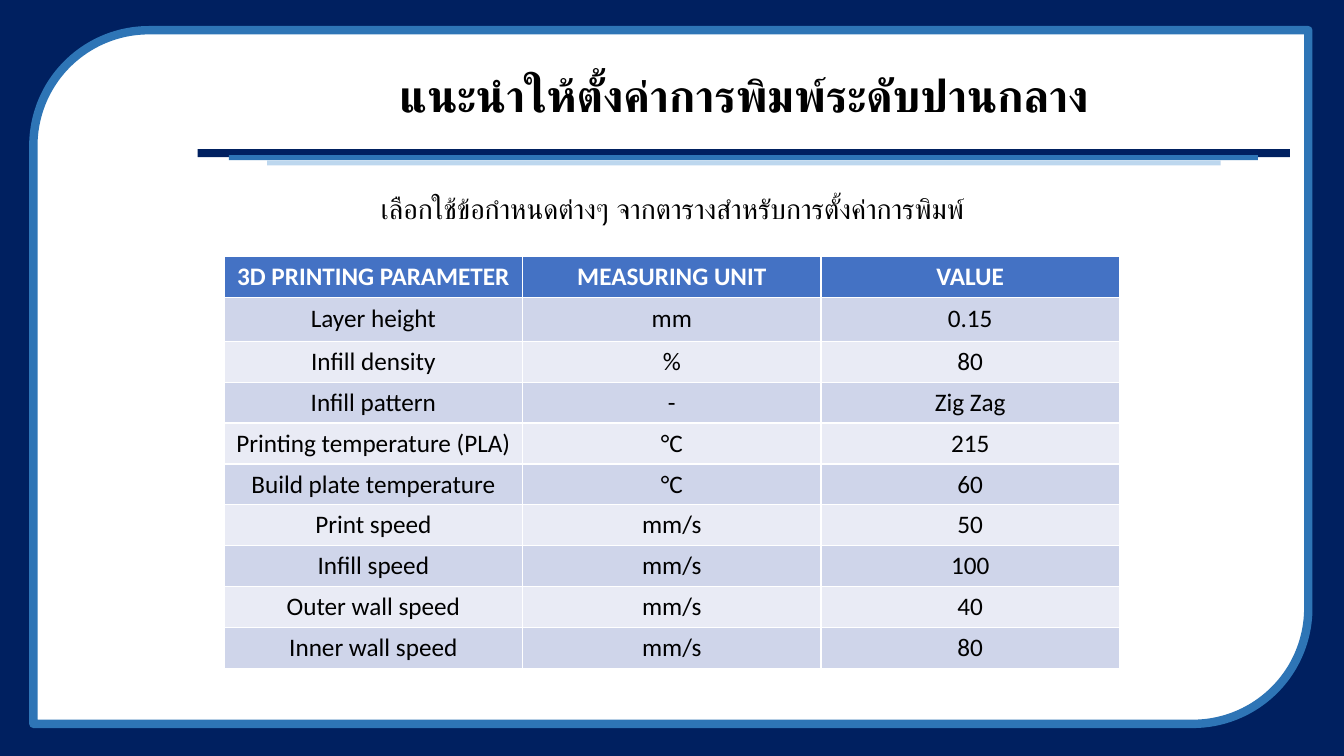
from lxml import etree
from pptx import Presentation
from pptx import util as u
from pptx.dml.color import RGBColor
from pptx.enum import shapes, text
from pptx.oxml import ns

NAVY = RGBColor(0x00, 0x20, 0x60)
BLUE = RGBColor(0x2E, 0x75, 0xB6)
PALE_BLUE = RGBColor(0xBD, 0xD7, 0xEE)
HEADER_BLUE = RGBColor(0x44, 0x72, 0xC4)
BAND_DARK = RGBColor(0xCF, 0xD5, 0xEA)
BAND_LIGHT = RGBColor(0xE9, 0xEB, 0xF5)
WHITE = RGBColor(0xFF, 0xFF, 0xFF)
BLACK = RGBColor(0x00, 0x00, 0x00)

presentation = Presentation()
presentation.slide_width = u.Cm(33.87)
presentation.slide_height = u.Cm(19.05)
slide = presentation.slides.add_slide(presentation.slide_layouts[6])


def add_panel(kind, box, color):
    shape = slide.shapes.add_shape(kind, *map(u.Cm, box))
    shape.shadow.inherit = False
    shape.fill.solid()
    shape.fill.fore_color.rgb = color
    shape.line.fill.background()
    return shape


def format_text(paragraph, color, **font_values):
    paragraph.alignment = text.PP_ALIGN.CENTER
    font = paragraph.runs[0].font
    for name, value in font_values.items():
        setattr(font, name, value)
    font.color.rgb = color


# Navy backdrop and white frame
RECTANGLE = shapes.MSO_SHAPE.RECTANGLE
add_panel(RECTANGLE, (0, 0, 33.87, 19.05), NAVY)
frame = add_panel(shapes.MSO_SHAPE.ROUND_2_DIAG_RECTANGLE, (0.84, 0.76, 32.13, 17.48), WHITE)
frame.rotation = 180
frame.line.color.rgb = BLUE
frame.line.width = u.Pt(6)

# Stepped rule under the title
for box, color in (
    ((4.98, 3.76, 27.53, 0.2), NAVY),
    ((5.77, 3.91, 25.93, 0.13), BLUE),
    ((6.73, 4.04, 24.03, 0.13), PALE_BLUE),
):
    add_panel(RECTANGLE, box, color)

# Title and instruction
for words, box, size, bold, bottom_margin in (
    ("แนะนำให้ตั้งค่าการพิมพ์ระดับปานกลาง", (4.98, 1.24, 27.53, 2.46), 32, True, 0.13),
    ("เลือกใช้ข้อกำหนดต่างๆ จากตารางสำหรับการตั้งค่าการพิมพ์",
     (2.11, 4.42, 29.67, 2.46), 20, False, 0.8),
):
    frame_text = slide.shapes.add_textbox(*map(u.Cm, box)).text_frame
    for name, value in {
        "word_wrap": True,
        "vertical_anchor": text.MSO_ANCHOR.MIDDLE,
        "margin_bottom": u.Cm(bottom_margin),
        "text": words,
    }.items():
        setattr(frame_text, name, value)
    paragraph = frame_text.paragraphs[0]
    paragraph.line_spacing = 0.9
    format_text(paragraph, BLACK, name="Arial", size=u.Pt(size), bold=bold)
    # Thai letters take the complex-script font
    properties = paragraph.runs[0].font._element
    etree.SubElement(properties, ns.qn("a:cs"), typeface="Arial")

# Printing parameters
rows = (
    ("3D PRINTING PARAMETER", "MEASURING UNIT", "VALUE"),
    ("Layer height", "mm", "0.15"),
    ("Infill density", "%", "80"),
    ("Infill pattern", "-", "Zig Zag"),
    ("Printing temperature (PLA)", "°C", "215"),
    ("Build plate temperature", "°C", "60"),
    ("Print speed", "mm/s", "50"),
    ("Infill speed", "mm/s", "100"),
    ("Outer wall speed", "mm/s", "40"),
    ("Inner wall speed", "mm/s", "80"),
)
table = slide.shapes.add_table(
    len(rows), 3, u.Cm(5.65), u.Cm(6.46), u.Cm(22.57), u.Cm(10.38)
).table
for column in table.columns:
    column.width = u.Cm(7.52)
for row_index, values in enumerate(rows):
    is_header = row_index == 0
    table.rows[row_index].height = u.Cm(1.11 if row_index == 1 else 1.03)
    band = BAND_DARK if row_index % 2 else BAND_LIGHT
    for column_index, value in enumerate(values):
        cell = table.cell(row_index, column_index)
        cell.text = value
        cell.vertical_anchor = text.MSO_ANCHOR.MIDDLE
        cell.fill.solid()
        cell.fill.fore_color.rgb = HEADER_BLUE if is_header else band
        format_text(cell.text_frame.paragraphs[0], WHITE if is_header else BLACK,
                    name="Calibri", size=u.Pt(18), bold=is_header)

presentation.save("out.pptx")
